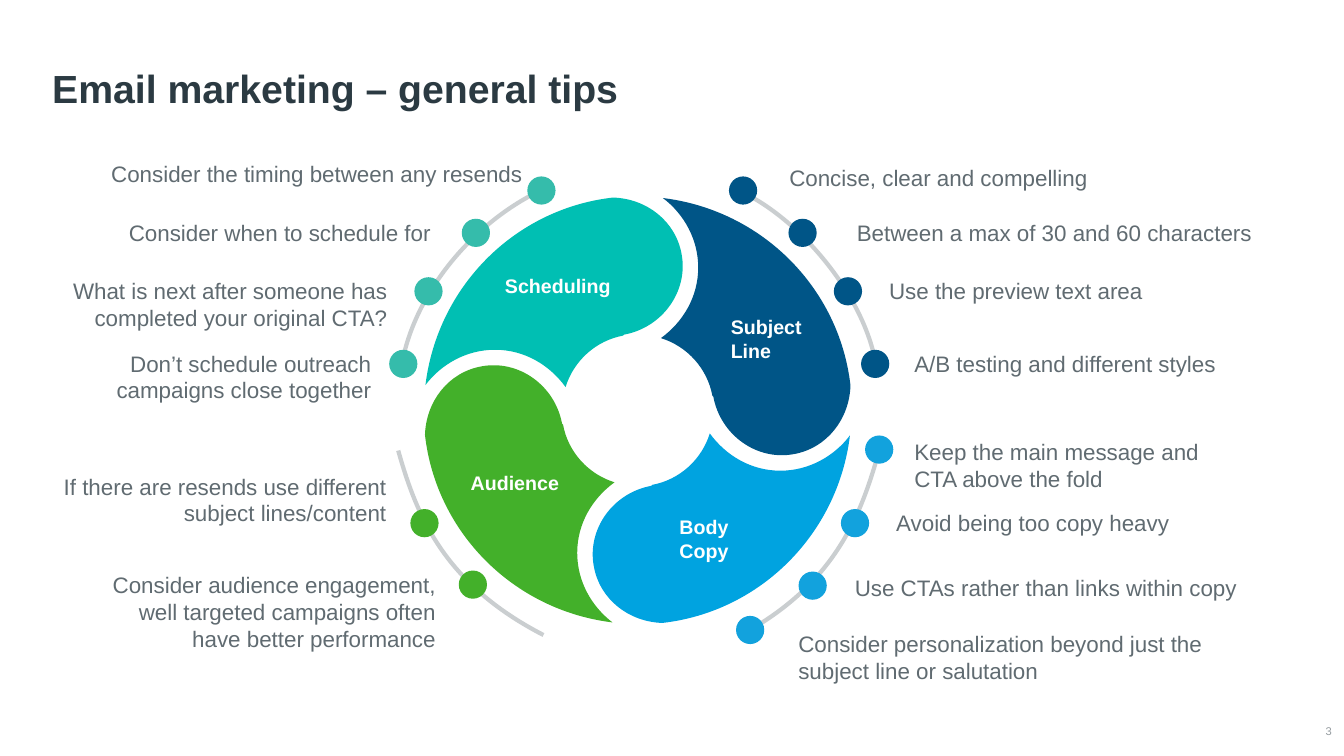
from lxml.etree import SubElement
from pptx import Presentation
from pptx.dml.color import RGBColor
from pptx.enum.shapes import MSO_SHAPE as Preset
from pptx.enum.text import MSO_ANCHOR as Anchor, MSO_AUTO_SIZE as AutoSize, PP_ALIGN as Align
from pptx.oxml.ns import qn
from pptx.util import Inches, Pt

WHITE, TITLE, BODY, ARC, PAGE = "FFFFFF", "2B3A42", "606B71", "CACED0", "959CA0"
TEAL, NAVY, BLUE, GREEN = "00BFB3", "005587", "00A3E0", "43B02A"
TEAL_DOT, BLUE_DOT = "35BCAB", "12A2DD"
WHEEL_CENTER = ((4.22 + 8.43) / 2, (1.96 + 6.18) / 2)
DOT_SIZE = 0.28


def color(value):
    return RGBColor.from_string(value)


def quarter_turn(points):
    """Turn points 90 degrees clockwise about the wheel center."""
    cx, cy = WHEEL_CENTER
    return [(cx - (y - cy), cy + (x - cx)) for x, y in points]


class Painter:
    font = "Arial"

    def __init__(self, slide):
        self.shapes = slide.shapes

    def curve(self, points, closed):
        """Start point, then two control points and an end point for each cubic curve."""
        places = [(Inches(x), Inches(y)) for x, y in points]
        builder = self.shapes.build_freeform(*places[0])
        builder.add_line_segments(places[3::3], close=closed)
        shape = builder.convert_to_shape()
        shape.shadow.inherit = False
        # Turn each straight segment into a cubic curve
        segments = list(shape.element.iter(qn("a:lnTo")))
        for segment, *controls in zip(segments, places[1::3], places[2::3]):
            segment.tag = qn("a:cubicBezTo")
            end = segment[0]
            for x, y in controls:
                SubElement(segment, qn("a:pt"), x=str(x - shape.left), y=str(y - shape.top))
            segment.append(end)
        return shape

    def petal(self, points, fill):
        petal = self.curve(points, closed=True)
        petal.fill.solid()
        petal.fill.fore_color.rgb = color(fill)
        petal.line.fill.background()

    def arc(self, points):
        arc = self.curve(points, closed=False)
        arc.fill.background()
        arc.line.color.rgb = color(ARC)
        arc.line.width = Pt(3)
        SubElement(arc.line.fill._xPr, qn("a:round"))

    def dot(self, left, top, fill):
        dot = self.shapes.add_shape(Preset.OVAL, Inches(left), Inches(top),
                                    Inches(DOT_SIZE), Inches(DOT_SIZE))
        dot.shadow.inherit = False
        dot.fill.solid()
        dot.fill.fore_color.rgb = color(fill)
        dot.line.fill.background()

    def text(self, box, paragraphs, size, ink, bold=False, align=Align.LEFT,
             anchor=Anchor.TOP, grow=True, inset=True):
        frame = self.shapes.add_textbox(*map(Inches, box)).text_frame
        frame.word_wrap = True
        frame.auto_size = AutoSize.SHAPE_TO_FIT_TEXT if grow else AutoSize.NONE
        frame.vertical_anchor = anchor
        if not inset:
            frame.margin_left = frame.margin_right = 0
            frame.margin_top = frame.margin_bottom = 0
        for index, words in enumerate(paragraphs):
            paragraph = frame.add_paragraph() if index else frame.paragraphs[0]
            paragraph.alignment = align
            for number, line in enumerate(words.split("\n")):
                if number:
                    paragraph.add_line_break()
                run = paragraph.add_run()
                run.text = line
                run.font.name = self.font
                run.font.size = Pt(size)
                run.font.bold = bold
                run.font.color.rgb = color(ink)
        return frame

    def label(self, left, top, width, height, *paragraphs):
        self.text((left, top, width, height), paragraphs, 14, WHITE, bold=True)

    def tip(self, left, top, width, lines, words, align):
        height = 0.37 + 0.27 * (lines - 1)
        self.text((left, top, width, height), [words], 16, BODY, align=align)


# Petal outline, repeated by quarter turns: scheduling, subject line, body copy, audience
PETAL = [
    (4.91, 3.47),
    (5.2, 3.47), (5.45, 3.62), (5.61, 3.84),
    (5.69, 3.58), (5.91, 3.38), (6.18, 3.33),
    (6.18, 3.33), (6.19, 3.32), (6.19, 3.32),
    (6.57, 3.25), (6.83, 2.89), (6.76, 2.52),
    (6.7, 2.19), (6.41, 1.97), (6.08, 1.96),
    (5.11, 2.07), (4.34, 2.84), (4.22, 3.82),
    (4.38, 3.61), (4.63, 3.47), (4.91, 3.47),
]
PETAL_COLORS = [TEAL, NAVY, BLUE, GREEN]

ARCS = [
    [(8.69, 3.63), (8.58, 2.95), (7.96, 2.2), (7.37, 1.91)],
    [(5.47, 1.84), (4.71, 2.16), (4.12, 2.9), (3.99, 3.59)],
    [(7.35, 6.3), (8.29, 5.79), (8.54, 5.11), (8.72, 4.47)],
    [(5.39, 6.3), (4.4, 5.79), (4.13, 5.11), (3.95, 4.47)],
]

DOTS = {
    TEAL_DOT: [(5.23, 1.75), (4.58, 2.17), (4.11, 2.75), (3.86, 3.47)],
    NAVY: [(7.23, 1.75), (7.82, 2.17), (8.27, 2.75), (8.54, 3.47)],
    BLUE_DOT: [(8.58, 4.32), (8.34, 5.05), (7.92, 5.67), (7.3, 6.11)],
    GREEN: [(4.07, 5.05), (4.55, 5.66)],
}

# Labels: left, top, width, height, paragraphs
LABELS = [
    (4.91, 2.67, 1.33, 0.34, "Scheduling"),
    (4.57, 4.62, 1.7, 0.34, "Audience"),
    (6.64, 5.06, 1.33, 0.57, "Body\nCopy"),
    (7.15, 3.08, 1.33, 0.57, "Subject", "Line"),
]

# Tips: left, top, width, number of lines, words
RIGHT_TIPS = [
    (7.73, 1.58, 4.09, 1, "Concise, clear and compelling"),
    (8.4, 2.13, 4.25, 1, "Between a max of 30 and 60 characters"),
    (8.72, 2.7, 3.29, 1, "Use the preview text area"),
    (8.97, 3.42, 3.29, 1, "A/B testing and different styles"),
    (8.97, 4.3, 3.29, 2, "Keep the main message and CTA above the fold"),
    (8.79, 5, 3.29, 1, "Avoid being too copy heavy"),
    (8.38, 5.65, 4.1, 1, "Use CTAs rather than links within copy"),
    (7.82, 6.2, 4.47, 2,
     "Consider personalization beyond just the subject line or salutation"),
]
LEFT_TIPS = [
    (0.55, 1.54, 4.73, 1, "Consider the timing between any resends"),
    (0.93, 2.13, 3.44, 1, "Consider when to schedule for"),
    (0.5, 2.7, 3.44, 2, "What is next after someone has completed your original CTA?"),
    (0.34, 3.42, 3.44, 2, "Don’t schedule outreach campaigns close together"),
    (0.49, 4.64, 3.44, 2, "If there are resends use different subject lines/content"),
    (0.98, 5.62, 3.44, 3,
     "Consider audience engagement, well targeted campaigns often have better performance"),
]


def main():
    deck = Presentation()
    deck.slide_width, deck.slide_height = Inches(13.33), Inches(7.5)
    painter = Painter(deck.slides.add_slide(deck.slide_layouts[6]))

    # Page number and title
    painter.text((12.82, 7.16, 0.39, 0.19), ["3"], 8, PAGE, align=Align.RIGHT,
                 anchor=Anchor.MIDDLE, grow=False, inset=False)
    title = painter.text((0.42, 0.32, 12.4, 0.84), ["Email marketing – general tips"],
                         28, TITLE, bold=True, anchor=Anchor.BOTTOM, grow=False)
    title.paragraphs[0].line_spacing = 0.9

    # Wheel
    petal = PETAL
    for fill in PETAL_COLORS:
        painter.petal(petal, fill)
        petal = quarter_turn(petal)

    # Arcs and dots around the wheel
    for arc in ARCS:
        painter.arc(arc)
    for fill, places in DOTS.items():
        for left, top in places:
            painter.dot(left, top, fill)

    # Petal labels and tips
    for label in LABELS:
        painter.label(*label)
    for tips, align in ((RIGHT_TIPS, Align.LEFT), (LEFT_TIPS, Align.RIGHT)):
        for tip in tips:
            painter.tip(*tip, align)

    deck.save("out.pptx")


if __name__ == "__main__":
    main()
